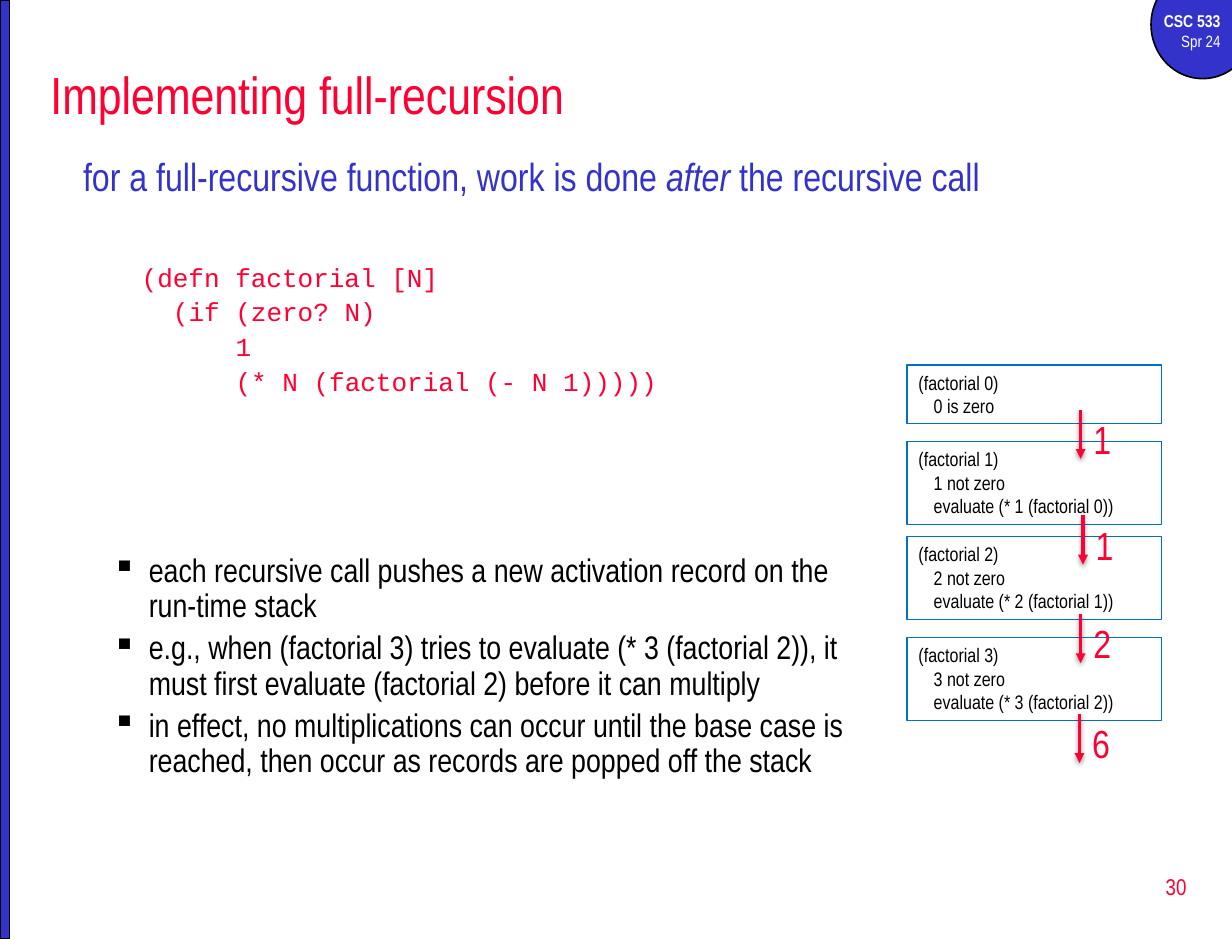
from dataclasses import dataclass

from lxml.etree import SubElement
from pptx import Presentation
from pptx.dml.color import RGBColor
from pptx.enum.shapes import MSO_CONNECTOR, MSO_SHAPE
from pptx.enum.text import MSO_ANCHOR, MSO_AUTO_SIZE, PP_ALIGN
from pptx.oxml.ns import qn
from pptx.util import Inches, Pt

COLORS = {
    "red": "FF0033",
    "blue": "3333CC",
    "border": "0070C0",
    "black": "000000",
    "white": "FFFFFF",
}
SANS = "Arial Narrow"
MONO = "Courier New"
CODE_CHAR = 16 * 0.6 / 72


@dataclass
class Record:
    n: int
    top: float
    height: float
    lines: list[str]


@dataclass
class Result:
    value: str
    x: float
    top: float


RECORDS = [
    Record(0, 3.11, 0.5, ["0 is zero"]),
    *[
        Record(n, top, 0.71, [f"{n} not zero", f"evaluate (* {n} (factorial {n - 1}))"])
        for n, top in [(1, 3.76), (2, 4.57), (3, 5.43)]
    ],
]
RESULTS = [
    Result("1", 9.21, 3.49),
    Result("1", 9.23, 4.39),
    Result("2", 9.21, 5.23),
    Result("6", 9.2, 6.08),
]
CODE = [
    (0, "(defn factorial [N]"),
    (2, "(if (zero? N)"),
    (6, "1"),
    (6, "(* N (factorial (- N 1)))))"),
]
POINTS = [
    "each recursive call pushes a new activation record on the run-time stack",
    "e.g., when (factorial 3) tries to evaluate (* 3 (factorial 2)), "
    "it must first evaluate (factorial 2) before it can multiply",
    "in effect, no multiplications can occur until the base case is reached, "
    "then occur as records are popped off the stack",
]


def rgb(name: str) -> RGBColor:
    return RGBColor.from_string(COLORS[name])


def add_run(p, text: str, size: float, color: str = "black", font: str = SANS,
            bold: bool = False, italic: bool = False) -> None:
    r = p.add_run()
    r.text = text
    r.font.size = Pt(size)
    r.font.name = font
    r.font.bold = bold
    r.font.italic = italic
    r.font.color.rgb = rgb(color)


def add_para(tf, text: str, size: float, left: float = 0, hang: float = 0,
             before: float = 0, spacing: float = 1.0, align=PP_ALIGN.LEFT,
             bullet: str = "", **font):
    p = tf.paragraphs[0] if not tf.paragraphs[0].runs else tf.add_paragraph()
    p.alignment = align
    p.line_spacing = spacing
    p.space_before = Pt(before)
    pPr = p._p.get_or_add_pPr()
    pPr.set("marL", str(Inches(left)))
    pPr.set("indent", str(Inches(-hang)))
    if bullet:
        SubElement(pPr, qn("a:buChar")).set("char", bullet)
    add_run(p, text, size, **font)
    return p


def add_text(slide, left: float, top: float, width: float, height: float,
             anchor=MSO_ANCHOR.TOP):
    sp = slide.shapes.add_textbox(Inches(left), Inches(top), Inches(width), Inches(height))
    tf = sp.text_frame
    tf.word_wrap = True
    tf.vertical_anchor = anchor
    return tf


def add_box(slide, kind, left: float, top: float, width: float, height: float,
            line: str = "black", weight: float = 1, fill: str = ""):
    sp = slide.shapes.add_shape(kind, Inches(left), Inches(top), Inches(width), Inches(height))
    sp.shadow.inherit = False
    sp.line.color.rgb = rgb(line)
    sp.line.width = Pt(weight)
    if fill:
        sp.fill.solid()
        sp.fill.fore_color.rgb = rgb(fill)
    else:
        sp.fill.background()
    return sp


def add_record(slide, rec: Record) -> None:
    sp = add_box(slide, MSO_SHAPE.RECTANGLE, 7.73, rec.top, 2.17, rec.height, "border", 0.75)
    tf = sp.text_frame
    tf.word_wrap = True
    tf.vertical_anchor = MSO_ANCHOR.TOP
    add_para(tf, f"(factorial {rec.n})", 12)
    for line in rec.lines:
        add_para(tf, line, 12, left=0.31, hang=0.18)


def add_result(slide, res: Result) -> None:
    add_para(add_text(slide, res.x + 0.01, res.top, 0.36, 0.44), res.value, 24, color="red")
    cxn = slide.shapes.add_connector(
        MSO_CONNECTOR.STRAIGHT, Inches(res.x), Inches(res.top),
        Inches(res.x), Inches(res.top + 0.42))
    cxn.line.color.rgb = rgb("red")
    cxn.line.width = Pt(2)
    SubElement(cxn.line._get_or_add_ln(), qn("a:tailEnd")).set("type", "triangle")
    effects = SubElement(cxn._element.spPr, qn("a:effectLst"))
    shadow = SubElement(effects, qn("a:outerShdw"), blurRad=str(Pt(3.1)),
                        dist=str(Pt(1.6)), dir="5400000", rotWithShape="0")
    color = SubElement(shadow, qn("a:srgbClr"), val=COLORS["black"])
    SubElement(color, qn("a:alpha"), val="38000")


def add_title(slide, text: str) -> None:
    sp = slide.shapes.title
    sp.left, sp.top, sp.width, sp.height = map(Inches, (0.33, 0.42, 9.92, 0.75))
    tf = sp.text_frame
    tf.auto_size = MSO_AUTO_SIZE.NONE
    tf.vertical_anchor = MSO_ANCHOR.MIDDLE
    add_para(tf, text, 32, color="red")


def main() -> None:
    prs = Presentation()
    prs.slide_width, prs.slide_height = Inches(10.5), Inches(8)
    slide = prs.slides.add_slide(prs.slide_layouts[5])

    add_box(slide, MSO_SHAPE.OVAL, 9.81, -0.25, 0.88, 0.92, fill="blue")
    add_box(slide, MSO_SHAPE.RECTANGLE, 0, 0, 0.08, 8, fill="blue")
    tf = add_text(slide, 9.67, 0.04, 0.83, 0.46)
    add_para(tf, "CSC 533", 10.5, align=PP_ALIGN.RIGHT, color="white", bold=True)
    add_para(tf, "Spr 24", 10, align=PP_ALIGN.RIGHT, color="white")
    tf = add_text(slide, 8.02, 7.29, 2.19, 0.53, MSO_ANCHOR.MIDDLE)
    add_para(tf, "30", 14, align=PP_ALIGN.RIGHT, color="red")

    add_title(slide, "Implementing full-recursion")
    tf = add_text(slide, 0.61, 1.29, 8.03, 2.71)
    p = add_para(tf, "for a full-recursive function, work is done ", 24, left=0.38,
                 hang=0.38, before=5.5, spacing=0.9, color="blue")
    add_run(p, "after", 24, "blue", italic=True)
    add_run(p, " the recursive call", 24, "blue")
    for i, (chars, line) in enumerate(CODE):
        add_para(tf, line, 16, left=0.5 + chars * CODE_CHAR, before=4 if i else 40,
                 spacing=0.9, color="red", font=MONO)

    for rec in RECORDS:
        add_record(slide, rec)
    for res in RESULTS:
        add_result(slide, res)

    tf = add_text(slide, 0.6, 4.67, 6.94, 2.35)
    for point in POINTS:
        add_para(tf, point, 20, left=0.57, hang=0.31, before=4.5, spacing=0.9, bullet="▪")

    prs.save("out.pptx")


if __name__ == "__main__":
    main()
